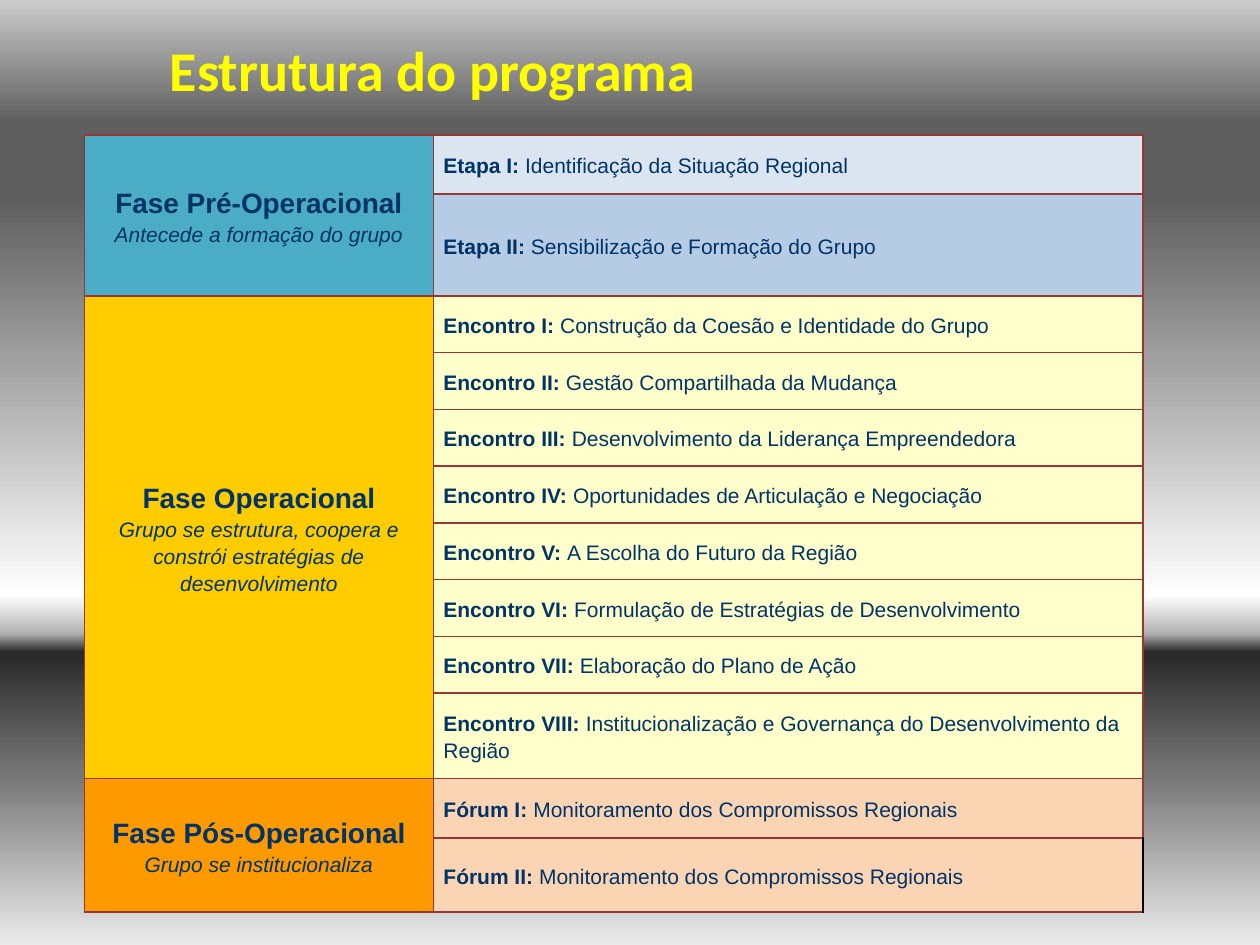
from lxml.etree import SubElement
from pptx import Presentation
from pptx.dml.color import RGBColor
from pptx.enum.text import MSO_ANCHOR as ANCHOR, PP_ALIGN as ALIGN
from pptx.oxml.ns import qn
from pptx.util import Inches, Pt

GRADIENT = [(0, "CBCBCB"), (13, "5F5F5F"), (21, "5F5F5F"), (63, "FFFFFF"),
            (67, "B2B2B2"), (69, "292929"), (82, "777777"), (100, "EAEAEA")]

PHASES = [
    ("Fase Pré-Operacional", "Antecede a formação do grupo", "4BACC6", [
        ("Etapa I:", "Identificação da Situação Regional", 0.47, "DBE5F1"),
        ("Etapa II:", "Sensibilização e Formação do Grupo", 0.81, "B6CBE4"),
    ]),
    ("Fase Operacional",
     "Grupo se estrutura, coopera e constrói estratégias de desenvolvimento", "FFCC00", [
        ("Encontro I:", "Construção da Coesão e Identidade do Grupo", 0.45, "FFFFCC"),
        ("Encontro II:", "Gestão Compartilhada da Mudança", 0.45, "FFFFCC"),
        ("Encontro III:", "Desenvolvimento da Liderança Empreendedora", 0.45, "FFFFCC"),
        ("Encontro IV:", "Oportunidades de Articulação e Negociação", 0.45, "FFFFCC"),
        ("Encontro V:", "A Escolha do Futuro da Região", 0.45, "FFFFCC"),
        ("Encontro VI:", "Formulação de Estratégias de Desenvolvimento", 0.45, "FFFFCC"),
        ("Encontro VII:", "Elaboração do Plano de Ação", 0.45, "FFFFCC"),
        ("Encontro VIII:", "Institucionalização e Governança do Desenvolvimento da Região",
         0.68, "FFFFCC"),
    ]),
    ("Fase Pós-Operacional", "Grupo se institucionaliza", "FF9900", [
        ("Fórum I:", "Monitoramento dos Compromissos Regionais", 0.47, "FBD4B4"),
        ("Fórum II:", "Monitoramento dos Compromissos Regionais", 0.59, "FBD4B4"),
    ]),
]


def rgb(value):
    return RGBColor.from_string(value)


class Deck:
    ink = "003366"
    border = "953735"
    title_color = "FFFF00"

    def __init__(self, slide):
        self.s = slide

    def background(self, stops):
        fill = self.s.background.fill
        fill.gradient()
        fill.gradient_angle = 270
        gs_list = next(self.s.element.iter(qn("a:gsLst")))
        for gs in list(gs_list):
            gs_list.remove(gs)
        for position, color in stops:
            gs = SubElement(gs_list, qn("a:gs"), pos=str(position * 1000))
            SubElement(gs, qn("a:srgbClr"), val=color)

    def font(self, p, name, size, color):
        p.font.name = name
        p.font.size = Pt(size)
        p.font.color.rgb = rgb(color)

    def title(self, text, x, y, w, h):
        tf = self.s.shapes.add_textbox(Inches(x), Inches(y), Inches(w), Inches(h)).text_frame
        tf.word_wrap = False
        p = tf.paragraphs[0]
        p.text = text
        p.alignment = ALIGN.RIGHT
        self.font(p, "Calibri", 32, self.title_color)
        p.font.bold = True

    def table(self, x, y, widths, heights):
        table = self.s.shapes.add_table(
            len(heights), len(widths), Inches(x), Inches(y),
            Inches(sum(widths)), Inches(sum(heights))).table
        table.first_row = table.horz_banding = False
        for column, width in zip(table.columns, widths):
            column.width = Inches(width)
        for row, height in zip(table.rows, heights):
            row.height = Inches(height)
        return table

    def cell(self, cell, fill, right=border):
        cell.margin_left = cell.margin_right = Inches(0.08)
        cell.margin_top = cell.margin_bottom = 0
        cell.vertical_anchor = ANCHOR.MIDDLE
        tc_pr = cell._tc.get_or_add_tcPr()
        for side in "LRTB":
            line = SubElement(tc_pr, qn(f"a:ln{side}"), w=str(Pt(1)))
            solid = SubElement(line, qn("a:solidFill"))
            SubElement(solid, qn("a:srgbClr"), val=right if side == "R" else self.border)
        cell.fill.solid()
        cell.fill.fore_color.rgb = rgb(fill)

    def paragraph(self, cell):
        p = cell.text_frame.paragraphs[0]
        p.line_spacing = 1.15
        self.font(p, "Arial", 12, self.ink)
        return p

    def phase(self, cell, name, detail):
        p = self.paragraph(cell)
        p.alignment = ALIGN.CENTER
        r = p.add_run()
        r.text = name
        r.font.bold = True
        r.font.size = Pt(16)
        p.add_line_break()
        r = p.add_run()
        r.text = detail
        r.font.italic = True

    def step(self, cell, label, text):
        p = self.paragraph(cell)
        r = p.add_run()
        r.text = label + " "
        r.font.bold = True
        p.add_run().text = text


def main():
    prs = Presentation()
    prs.slide_width, prs.slide_height = Inches(10), Inches(7.5)
    deck = Deck(prs.slides.add_slide(prs.slide_layouts[6]))
    deck.background(GRADIENT)
    deck.title("Estrutura do programa", 1.21, 0.23, 4.41, 0.64)

    heights = [step[2] for phase in PHASES for step in phase[3]]
    table = deck.table(0.67, 1.07, [2.77, 5.63], heights)
    row = 0
    for name, detail, phase_fill, steps in PHASES:
        first = table.cell(row, 0)
        first.merge(table.cell(row + len(steps) - 1, 0))
        deck.phase(first, name, detail)
        for label, text, _, fill in steps:
            deck.cell(table.cell(row, 0), phase_fill)
            last = row == len(heights) - 1
            deck.cell(table.cell(row, 1), fill, "000000" if last else deck.border)
            deck.step(table.cell(row, 1), label, text)
            row += 1
    prs.save("out.pptx")


if __name__ == "__main__":
    main()
